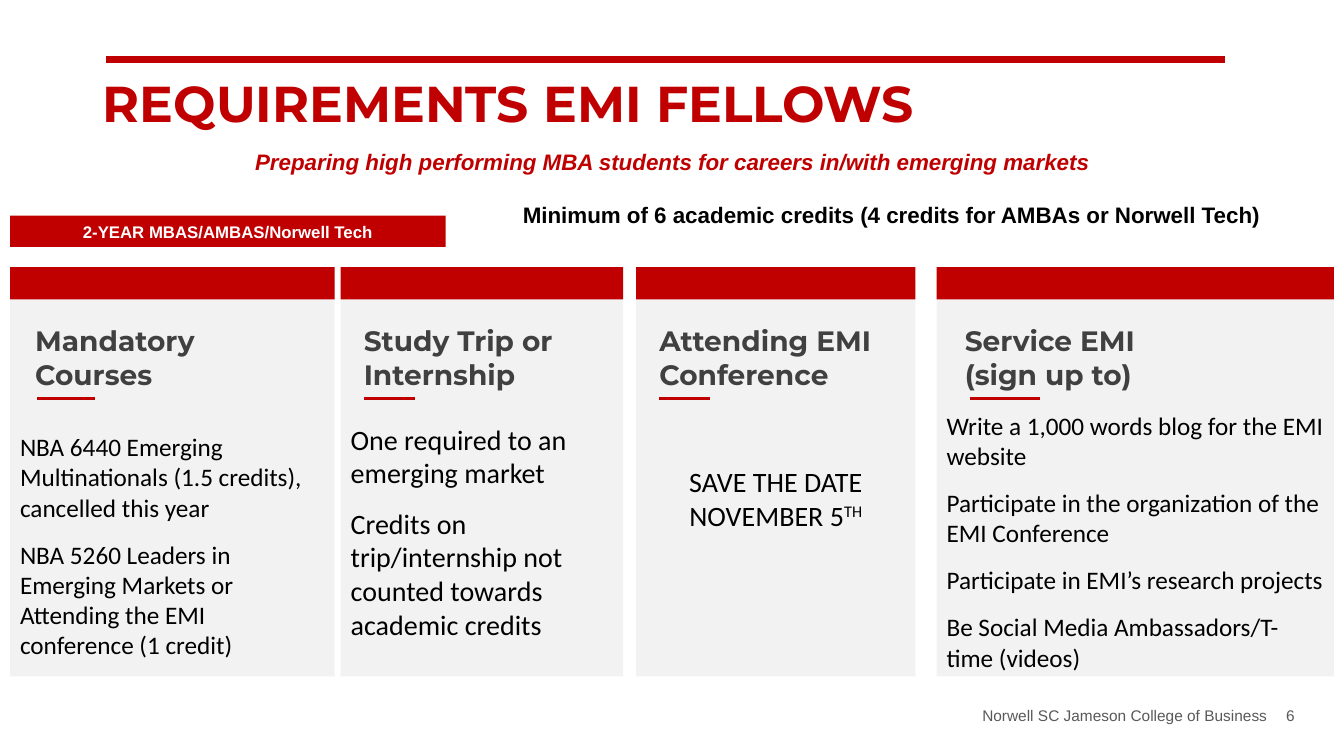
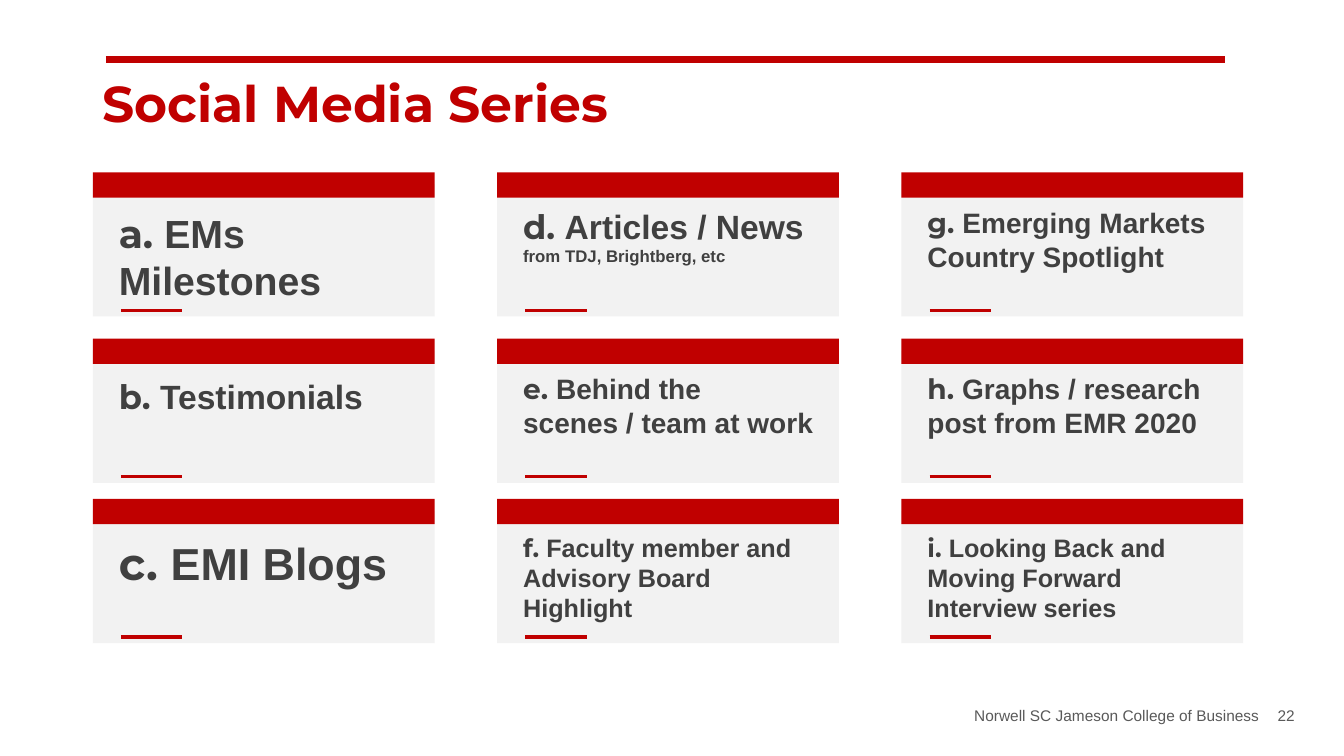
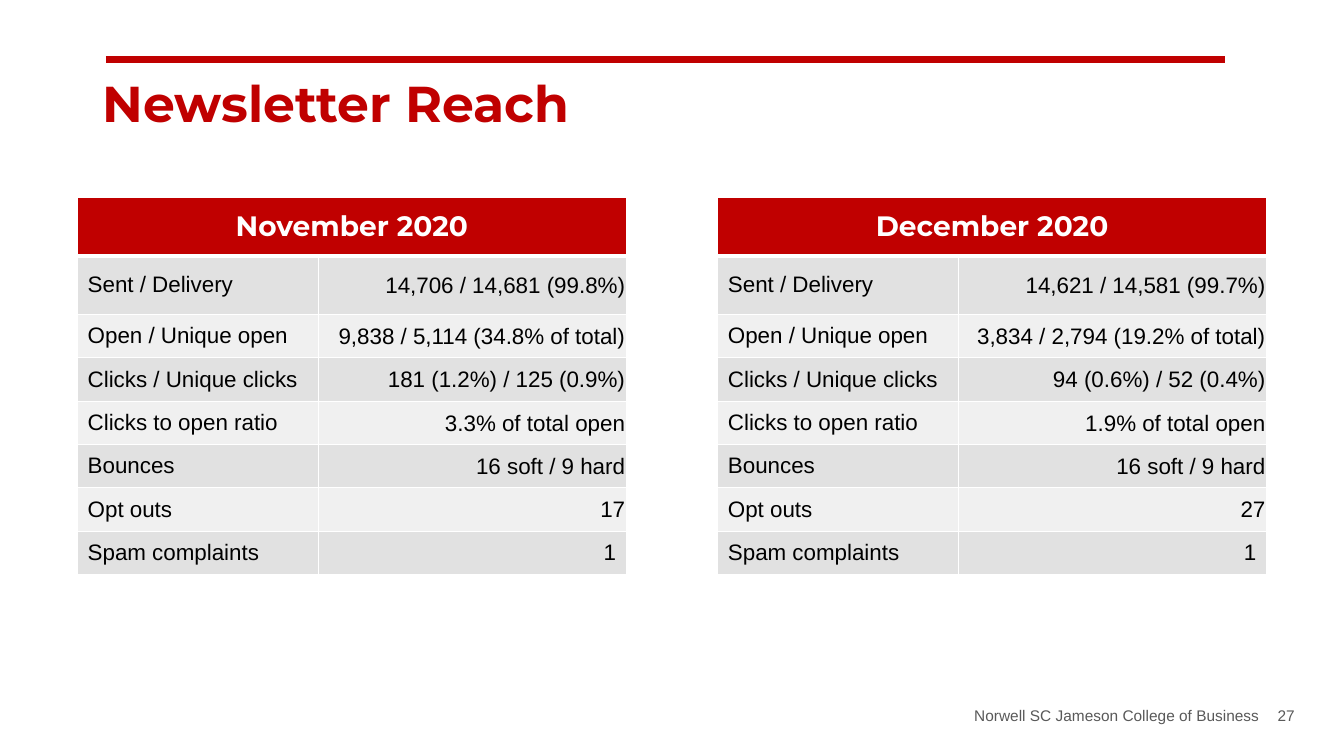
"""Build three slides on the EMI fellows: requirements, social media series and newsletter reach."""
from dataclasses import dataclass

from lxml.etree import SubElement
from pptx import Presentation
from pptx.dml.color import RGBColor
from pptx.enum.shapes import MSO_CONNECTOR, MSO_SHAPE
from pptx.enum.text import MSO_ANCHOR, PP_ALIGN
from pptx.oxml.ns import qn
from pptx.util import Inches, Pt


@dataclass(frozen=True)
class Theme:
    red: str = "C00000"
    panel: str = "F2F2F2"
    heading: str = "404040"
    footer: str = "595959"
    black: str = "000000"
    white: str = "FFFFFF"
    bands: tuple = ("E1E1E1", "F0F0F0")
    title_font: str = "Montserrat"
    text_font: str = "Arial"
    card_font: str = "Calibri"
    title_size: int = 36
    heading_size: int = 20
    text_size: int = 16
    badge_size: int = 12
    footer_size: int = 11
    title_line: float = 5
    accent_line: float = 2.25


theme = Theme()


def add_block(slide, left, top, width, height, fill=None):
    box = [Inches(value) for value in (left, top, width, height)]
    if fill:
        shape = slide.shapes.add_shape(MSO_SHAPE.RECTANGLE, *box)
        shape.shadow.inherit = False
        shape.fill.solid()
        shape.fill.fore_color.rgb = RGBColor.from_string(fill)
        shape.line.fill.background()
    else:
        shape = slide.shapes.add_textbox(*box)
    shape.text_frame.word_wrap = True
    return shape


def style_text(text_frame, size, font, color, bold=False, italic=False, align=PP_ALIGN.LEFT, before=0):
    for paragraph in text_frame.paragraphs:
        paragraph.alignment = align
        paragraph.space_before = Pt(before)
        for run in paragraph.runs:
            run.font.size = Pt(size)
            run.font.name = font
            run.font.bold = bold
            run.font.italic = italic
            run.font.color.rgb = RGBColor.from_string(color)


presentation = Presentation()
presentation.slide_width = Inches(13.33)
presentation.slide_height = Inches(7.5)

slides = []
rules = []
for title, number in (("REQUIREMENTS EMI FELLOWS", "6"), ("Social Media Series", "22"), ("Newsletter Reach", "27")):
    slide = presentation.slides.add_slide(presentation.slide_layouts[6])
    slides.append(slide)
    rules.append((slide, 1.05, 0.59, 11.1, theme.title_line))
    frame = add_block(slide, 0.92, 0.73, 12.02, 0.85).text_frame
    frame.text = title
    style_text(frame, theme.title_size, theme.title_font, theme.red, bold=True)
    frame.paragraphs[0].line_spacing = 0.9
    name_right = 12.75 - 0.08 * len(number)
    for text, right, width in (("Norwell SC Jameson College of Business", name_right, 4), (number, 12.94, 0.5)):
        frame = add_block(slide, right - width, 6.96, width, 0.4).text_frame
        frame.text = text
        style_text(frame, theme.footer_size, theme.text_font, theme.footer, align=PP_ALIGN.RIGHT)

requirements, series, newsletter = slides

frame = add_block(requirements, 4.78, 1.95, 7.82, 0.37).text_frame
frame.text = "Minimum of 6 academic credits (4 credits for AMBAs or Norwell Tech)"
style_text(frame, theme.text_size, theme.text_font, theme.black, bold=True, align=PP_ALIGN.RIGHT, before=12)
frame = add_block(requirements, 0.58, 1.42, 12.18, 0.37).text_frame
frame.text = "Preparing high performing MBA students for careers in/with emerging markets"
style_text(frame, theme.text_size, theme.text_font, theme.red, True, True, PP_ALIGN.CENTER, 12)
frame = add_block(requirements, 0.1, 2.14, 4.32, 0.31, theme.red).text_frame
frame.text = "2-YEAR MBAS/AMBAS/Norwell Tech"
style_text(frame, theme.badge_size, theme.text_font, theme.white, bold=True, align=PP_ALIGN.CENTER)

requirement_cards = (
    (0.1, 3.22, "Mandatory Courses", 0.15, 0.27, 0.57, 4.23, 2.39, 18, PP_ALIGN.LEFT,
     "NBA 6440 Emerging Multinationals (1.5 credits), cancelled this year\n"
     "NBA 5260 Leaders in Emerging Markets or Attending the EMI conference (1 credit)"),
    (3.38, 2.8, "Study Trip or Internship", 0.13, 0.23, 0.51, 4.14, 1.95, 20, PP_ALIGN.LEFT,
     "One required to an emerging market\n"
     "Credits on trip/internship not counted towards academic credits"),
    (6.31, 2.77, "Attending EMI Conference", 0.13, 0.23, 0.5, 4.56, 0.77, 20, PP_ALIGN.CENTER,
     "SAVE THE DATE\vNOVEMBER 5"),
    (9.29, 3.94, "Service EMI\v(sign up to)", 0.18, 0.33, 0.7, 4.02, 2.73, 18, PP_ALIGN.LEFT,
     "Write a 1,000 words blog for the EMI website\n"
     "Participate in the organization of the EMI Conference\n"
     "Participate in EMI’s research projects\n"
     "Be Social Media Ambassadors/T-time (videos)"),
)
for (left, width, heading, heading_inset, accent_inset, accent_length,
     body_top, body_height, body_size, align, body) in requirement_cards:
    add_block(requirements, left, 2.8, width, 3.91, theme.panel)
    add_block(requirements, left, 2.65, width, 0.32, theme.red)
    rules.append((requirements, left + accent_inset, 3.95, accent_length, theme.accent_line))
    frame = add_block(requirements, left + heading_inset, 3.16, width - 0.35, 0.77).text_frame
    frame.text = heading
    style_text(frame, theme.heading_size, theme.title_font, theme.heading, bold=True)
    frame = add_block(requirements, left, body_top, width, body_height).text_frame
    frame.text = body
    if body.endswith("NOVEMBER 5"):
        ordinal = frame.paragraphs[0].add_run()
        ordinal.text = "TH"
        ordinal.font._element.set("baseline", "30000")
    style_text(frame, body_size, theme.card_font, theme.black, align=align, before=12)

series_columns = (
    (("a. ", "EMs Milestones", 28), ("b. ", "Testimonials", 24), ("c. ", "EMI Blogs", 32)),
    (("d. ", "Articles / News", 24), ("e. ", "Behind the scenes / team at work", 20),
     ("f. ", "Faculty member and Advisory Board Highlight", 18)),
    (("g. ", "Emerging Markets Country Spotlight", 20), ("h. ", "Graphs / research post from EMR 2020", 20),
     ("i. ", "Looking Back and Moving Forward Interview series", 18)),
)
for column, topics in enumerate(series_columns):
    left = 0.92 + 4.01 * column
    text_offset = 0.16 if column else 0.2
    for top, (letter, topic, size) in zip((1.83, 3.48, 5.07), topics):
        add_block(series, left, top, 3.39, 1.31, theme.panel)
        add_block(series, left, top - 0.12, 3.39, 0.25, theme.red)
        rules.append((series, left + 0.28, top + 1.25, 0.61, theme.accent_line))
        frame = add_block(series, left + 0.16, top + text_offset, 3.09, 1).text_frame
        frame.text = letter
        topic_run = frame.paragraphs[0].add_run()
        topic_run.text = topic
        if letter == "d. ":
            frame.add_paragraph().text = "from TDJ, Brightberg, etc"
        style_text(frame, size, theme.title_font, theme.heading, bold=True)
        topic_run.font.name = theme.text_font
        for paragraph in frame.paragraphs[1:]:
            style_run = paragraph.runs[0]
            style_run.font.name = theme.text_font
            style_run.font.size = Pt(theme.badge_size)

measures = ("Sent / Delivery", "Open / Unique open", "Clicks / Unique clicks", "Clicks to open ratio",
            "Bounces", "Opt outs", "Spam complaints")
months = (
    (0.77, "November 2020", ("14,706 / 14,681 (99.8%)", "9,838 / 5,114 (34.8% of total)",
                             "181 (1.2%) / 125 (0.9%)", "3.3% of total open", "16 soft / 9 hard", "17", "1")),
    (7.12, "December 2020", ("14,621 / 14,581 (99.7%)", "3,834 / 2,794 (19.2% of total)",
                             "94 (0.6%) / 52 (0.4%)", "1.9% of total open", "16 soft / 9 hard", "27", "1")),
)
for left, month, values in months:
    table = newsletter.shapes.add_table(8, 2, Inches(left), Inches(1.96), Inches(5.44), Inches(3.74)).table
    table.first_row = False
    table.horz_banding = False
    table.columns[0].width = Inches(2.39)
    table.columns[1].width = Inches(3.05)
    table.cell(0, 0).merge(table.cell(0, 1))
    for row, texts in enumerate([(month, ""), *zip(measures, values)]):
        table.rows[row].height = Inches(0.58 if row < 2 else 0.43)
        for column, text in enumerate(texts):
            cell = table.cell(row, column)
            properties = cell._tc.get_or_add_tcPr()
            for side in ("lnL", "lnR", "lnT", "lnB"):
                heavy = (row, side) in ((0, "lnB"), (1, "lnT"))
                border = SubElement(properties, qn(f"a:{side}"), w=str(Pt(3 if heavy else 1)))
                SubElement(SubElement(border, qn("a:solidFill")), qn("a:srgbClr"), val=theme.white)
            cell.fill.solid()
            cell.fill.fore_color.rgb = RGBColor.from_string(theme.bands[(row - 1) % 2] if row else theme.red)
            cell.vertical_anchor = MSO_ANCHOR.MIDDLE
            if text:
                cell.text_frame.text = text
            if row == 0:
                style_text(cell.text_frame, theme.heading_size, theme.title_font, theme.white,
                           bold=True, align=PP_ALIGN.CENTER)
                continue
            align = PP_ALIGN.RIGHT if column else PP_ALIGN.LEFT
            style_text(cell.text_frame, theme.text_size, theme.text_font, theme.black, align=align)
            if column and row < 7:
                cell.margin_left = cell.margin_right = cell.margin_top = Inches(0.01)
                cell.margin_bottom = 0

for slide, left, top, length, weight in rules:
    connector = slide.shapes.add_connector(
        MSO_CONNECTOR.STRAIGHT, Inches(left), Inches(top), Inches(left + length), Inches(top))
    connector.line.color.rgb = RGBColor.from_string(theme.red)
    connector.line.width = Pt(weight)
    SubElement(connector._element.spPr, qn("a:effectLst"))

presentation.save("out.pptx")
